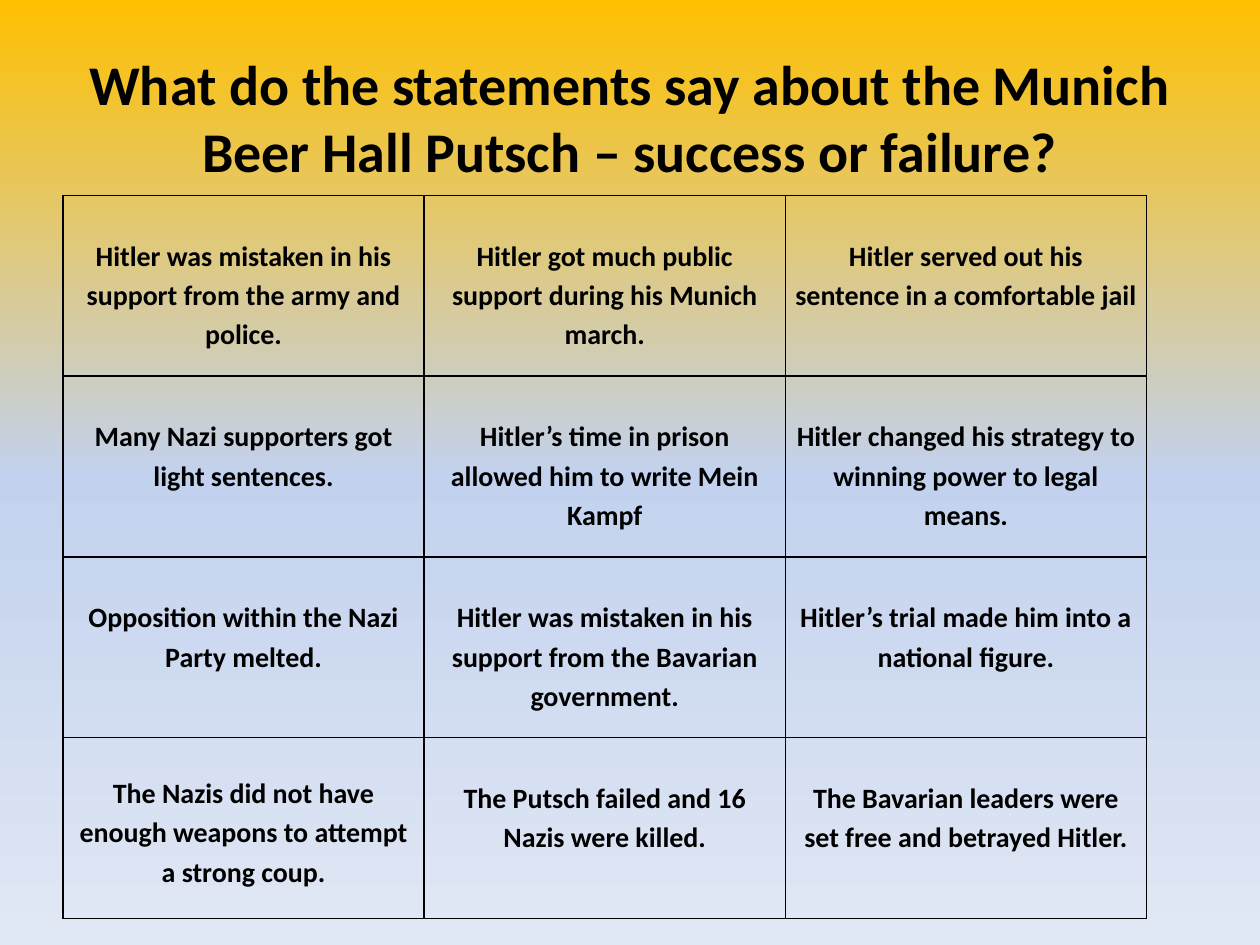
from copy import deepcopy

from lxml.etree import SubElement
from pptx import Presentation
from pptx.dml.color import RGBColor as Rgb
from pptx.enum.text import MSO_ANCHOR as Anchor, PP_ALIGN as Align
from pptx.oxml.ns import qn
from pptx.util import Inches, Pt

COLORS = {"ink": "000000", "gold": "FFC000", "sky": "C2D1ED", "mist": "E1E8F5"}
QUESTION = "What do the statements say about the Munich Beer Hall Putsch – success or failure?"
STATEMENTS = [
    ["Hitler was mistaken in his support from the army and police.",
     "Hitler got much public support during his Munich march.",
     "Hitler served out his sentence in a comfortable jail"],
    ["Many Nazi supporters got light sentences.",
     "Hitler’s time in prison allowed him to write Mein Kampf",
     "Hitler changed his strategy to winning power to legal means."],
    ["Opposition within the Nazi Party melted.",
     "Hitler was mistaken in his support from the Bavarian government.",
     "Hitler’s trial made him into a national figure."],
    ["The Nazis did not have enough weapons to attempt a strong coup.",
     "The Putsch failed and 16 Nazis were killed.",
     "The Bavarian leaders were set free and betrayed Hitler."],
]


def write(frame, text, size, spacing=1.0):
    """Write one bold, centred paragraph into a text frame."""
    frame.word_wrap = True
    paragraph = frame.paragraphs[0]
    paragraph.alignment = Align.CENTER
    paragraph.line_spacing = spacing
    run = paragraph.add_run()
    run.text = text
    run.font.name = "Calibri"
    run.font.size = Pt(size)
    run.font.bold = True
    run.font.color.rgb = Rgb.from_string(COLORS["ink"])


def paint_background(slide):
    """Fill the slide with a three-stop gradient running downwards."""
    fill = slide.background.fill
    fill.gradient()
    fill.gradient_angle = 270
    stop_list = next(slide.element.iter(qn("a:gsLst")))
    stop_list.append(deepcopy(stop_list[-1]))
    for stop, name, position in zip(fill.gradient_stops, ("gold", "sky", "mist"), (0, 0.5, 1)):
        stop.color.rgb = Rgb.from_string(COLORS[name])
        stop.position = position


def add_question(slide, left, top, width, height):
    """Place the heading question in its box."""
    frame = slide.shapes.add_textbox(left, top, width, height).text_frame
    frame.vertical_anchor = Anchor.MIDDLE
    write(frame, QUESTION, size=32)


def outline(cell):
    """Draw a thin line on all four sides of a cell."""
    properties = cell._tc.get_or_add_tcPr()
    for side in ("a:lnL", "a:lnR", "a:lnT", "a:lnB"):
        line = SubElement(properties, qn(side), w=str(Pt(1)))
        solid = SubElement(line, qn("a:solidFill"))
        SubElement(solid, qn("a:srgbClr"), val=COLORS["ink"])


def add_statements(slide, left, top, width, height):
    """Place the grid of statements in its box."""
    grid = slide.shapes.add_table(len(STATEMENTS), len(STATEMENTS[0]), left, top, width, height).table
    grid.first_row = grid.horz_banding = False
    for r, row in enumerate(STATEMENTS):
        for c, statement in enumerate(row):
            cell = grid.cell(r, c)
            outline(cell)
            cell.fill.background()
            cell.margin_left = cell.margin_right = Inches(0.07)
            cell.margin_top = Inches(0.27 if (r, c) == (3, 0) else 0.31)
            cell.margin_bottom = 0
            write(cell.text_frame, statement, size=16, spacing=1.15)


def main():
    """Build and save the slide."""
    deck = Presentation()
    deck.slide_width, deck.slide_height = Inches(10), Inches(7.5)
    slide = deck.slides.add_slide(deck.slide_layouts[6])
    paint_background(slide)
    add_question(slide, Inches(0.5), Inches(0.3), Inches(9), Inches(1.25))
    add_statements(slide, Inches(0.5), Inches(1.55), Inches(8.6), Inches(5.74))
    deck.save("out.pptx")


if __name__ == "__main__":
    main()
